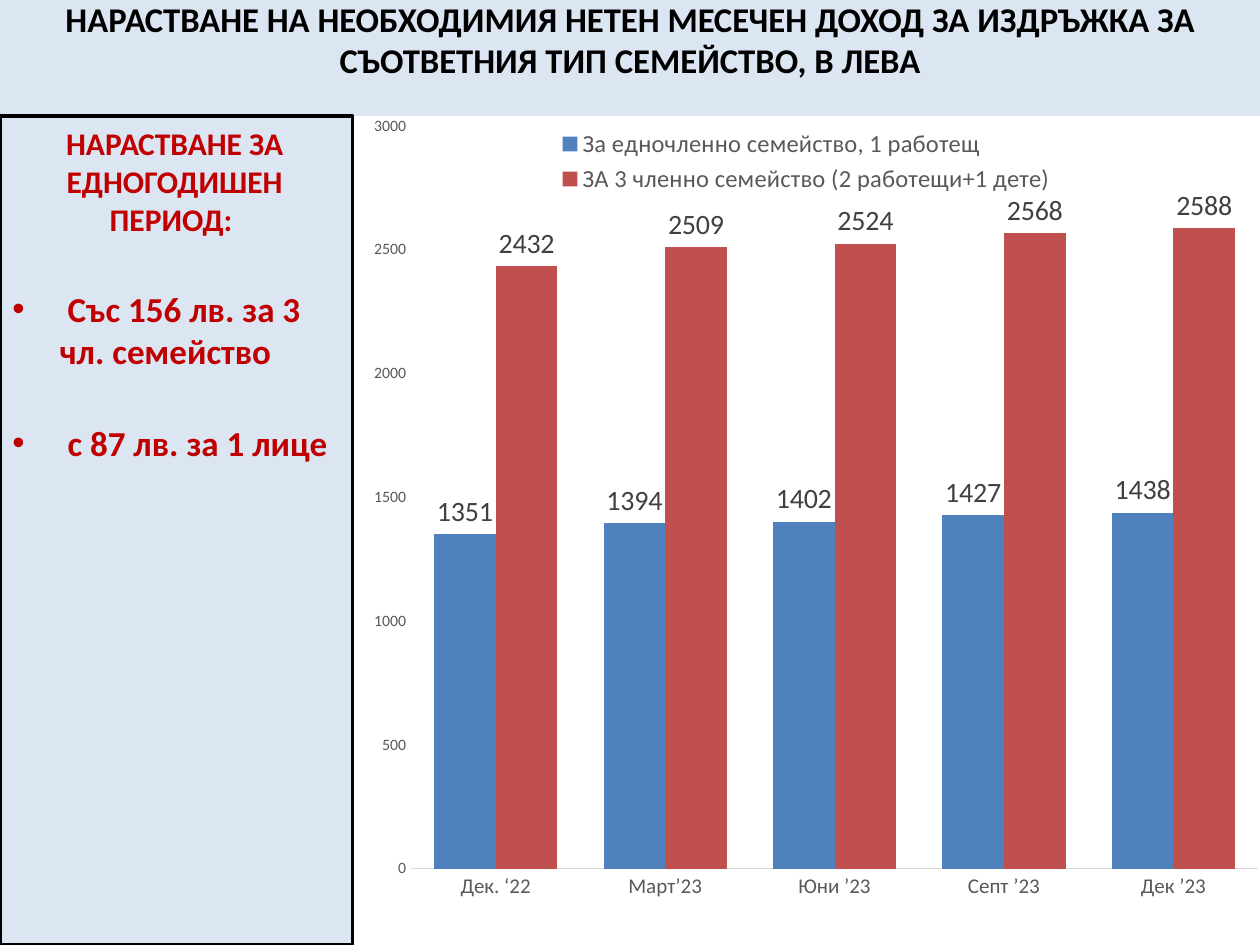
from lxml import etree
from pptx import Presentation
from pptx import util as u
from pptx.chart import data as chart_data
from pptx.dml import color
from pptx.enum import chart as ch, shapes, text
from pptx.oxml import ns

FONT = "Calibri"
PANEL, RED, GREY = "DCE6F2", "C00000", "595959"
CATEGORIES = ["Дек. ‘22", "Март’23", "Юни ’23", "Септ ’23", "Дек ’23"]
SERIES = [
    ("За едночленно семейство, 1 работещ", "4F81BD", [1351, 1394, 1402, 1427, 1438]),
    ("ЗА 3 членно семейство (2 работещи+1 дете)", "C0504D", [2432, 2509, 2524, 2568, 2588]),
]


def rgb(value):
    return color.RGBColor.from_string(value)


def style_font(font, size, hex_color, bold=False):
    font.name, font.size, font.bold = FONT, u.Pt(size), bold
    font.color.rgb = rgb(hex_color)


def add_panel(slide, box, anchor, insets):
    """Add a filled rectangle; insets are left, top, right, bottom."""
    panel = slide.shapes.add_shape(shapes.MSO_SHAPE.RECTANGLE, *map(u.Pt, box))
    panel.shadow.inherit = False
    panel.fill.solid()
    panel.fill.fore_color.rgb = rgb(PANEL)
    panel.line.fill.background()
    frame = panel.text_frame
    frame.word_wrap = True
    frame.vertical_anchor = anchor
    frame.margin_left, frame.margin_top, frame.margin_right, frame.margin_bottom = map(u.Pt, insets)
    return panel


def write(paragraph, words, size, hex_color, alignment, before=0):
    paragraph.alignment = alignment
    paragraph.space_before = u.Pt(before)
    run = paragraph.add_run()
    run.text = words
    style_font(run.font, size, hex_color, bold=True)


def add_bullet(paragraph, indent):
    properties = paragraph._p.get_or_add_pPr()
    properties.set("marL", str(u.Pt(indent)))
    properties.set("indent", str(-u.Pt(indent)))
    font = etree.SubElement(properties, ns.qn("a:buFont"))
    font.set("typeface", "Arial")
    etree.SubElement(properties, ns.qn("a:buChar")).set("char", "•")


def add_title(slide, box):
    title = add_panel(slide, box, text.MSO_ANCHOR.MIDDLE, (7.2, 0, 7.2, 21.6))
    write(title.text_frame.paragraphs[0],
          "НАРАСТВАНЕ НА НЕОБХОДИМИЯ НЕТЕН МЕСЕЧЕН ДОХОД ЗА ИЗДРЪЖКА ЗА "
          "СЪОТВЕТНИЯ ТИП СЕМЕЙСТВО, В ЛЕВА", 19.8, "000000", text.PP_ALIGN.CENTER)


def add_growth_summary(slide, box):
    summary = add_panel(slide, box, text.MSO_ANCHOR.TOP, (7.2, 4.6, 9, 3.6))
    summary.line.color.rgb = rgb("000000")
    summary.line.width = u.Pt(2)
    frame = summary.text_frame
    write(frame.paragraphs[0], "НАРАСТВАНЕ ЗА ЕДНОГОДИШЕН ПЕРИОД: ", 18, RED, text.PP_ALIGN.CENTER)
    for words in (" Със 156 лв. за 3 чл. семейство", " с 87 лв. за 1 лице"):
        paragraph = frame.add_paragraph()
        write(paragraph, words, 20, RED, text.PP_ALIGN.LEFT, before=28.5)
        add_bullet(paragraph, 27)


def make_layout(x, y, width, height, inner=False):
    layout = etree.Element(ns.qn("c:layout"))
    manual = etree.SubElement(layout, ns.qn("c:manualLayout"))
    entries = [("layoutTarget", "inner")] if inner else []
    entries += [("xMode", "edge"), ("yMode", "edge"),
                ("x", x), ("y", y), ("w", width), ("h", height)]
    for name, value in entries:
        etree.SubElement(manual, ns.qn("c:" + name)).set("val", str(value))
    return layout


def style_axis(axis, size):
    axis.has_major_gridlines = False
    axis.major_tick_mark = axis.minor_tick_mark = ch.XL_TICK_MARK.NONE
    style_font(axis.tick_labels.font, size, GREY)


def add_income_chart(slide, box):
    values = chart_data.CategoryChartData(number_format="0")
    values.categories = CATEGORIES
    for name, _, numbers in SERIES:
        values.add_series(name, numbers)
    chart = slide.shapes.add_chart(
        ch.XL_CHART_TYPE.COLUMN_CLUSTERED, *map(u.Pt, box), values).chart
    style_font(chart.font, 10, "000000")
    chart.has_title = False

    style_axis(chart.category_axis, 12)
    chart.category_axis.format.line.color.rgb = rgb("D9D9D9")
    chart.category_axis.format.line.width = u.Pt(0.75)
    value_axis = chart.value_axis
    style_axis(value_axis, 9)
    value_axis.format.line.fill.background()
    value_axis.minimum_scale, value_axis.maximum_scale, value_axis.major_unit = 0, 3000, 500
    value_axis.tick_labels.number_format = "0"
    value_axis.tick_labels.number_format_is_linked = False

    plot = chart.plots[0]
    plot.gap_width, plot.overlap, plot.vary_by_categories = 75, 0, False
    for series, (_, fill, _) in zip(plot.series, SERIES):
        series.format.fill.solid()
        series.format.fill.fore_color.rgb = rgb(fill)
        labels = series.data_labels
        labels.show_value = True
        labels.number_format, labels.number_format_is_linked = "0", False
        labels.position = ch.XL_LABEL_POSITION.OUTSIDE_END
        style_font(labels.font, 16, "404040")

    chart.has_legend = True
    legend = chart.legend
    legend.position = ch.XL_LEGEND_POSITION.BOTTOM
    legend.include_in_layout = False
    style_font(legend.font, 14, GREY)
    legend._element.insert(1, make_layout(0.21, 0.01, 0.57, 0.09))

    plot_area = chart._chartSpace.chart.plotArea
    for old_layout in plot_area.findall(ns.qn("c:layout")):
        plot_area.remove(old_layout)
    plot_area.insert(0, make_layout(0.055, 0.012, 0.943, 0.896, inner=True))


def main():
    width, height = 720, 540
    title_height, summary_width, chart_left = 66.24, 201.6, 206.64
    presentation = Presentation()
    presentation.slide_width, presentation.slide_height = u.Pt(width), u.Pt(height)
    slide = presentation.slides.add_slide(presentation.slide_layouts[6])
    body_height = height - title_height
    add_title(slide, (0, 0, width, title_height))
    add_growth_summary(slide, (0, title_height, summary_width, body_height))
    add_income_chart(slide, (chart_left, title_height, width - chart_left, body_height))
    presentation.save("out.pptx")


if __name__ == "__main__":
    main()
